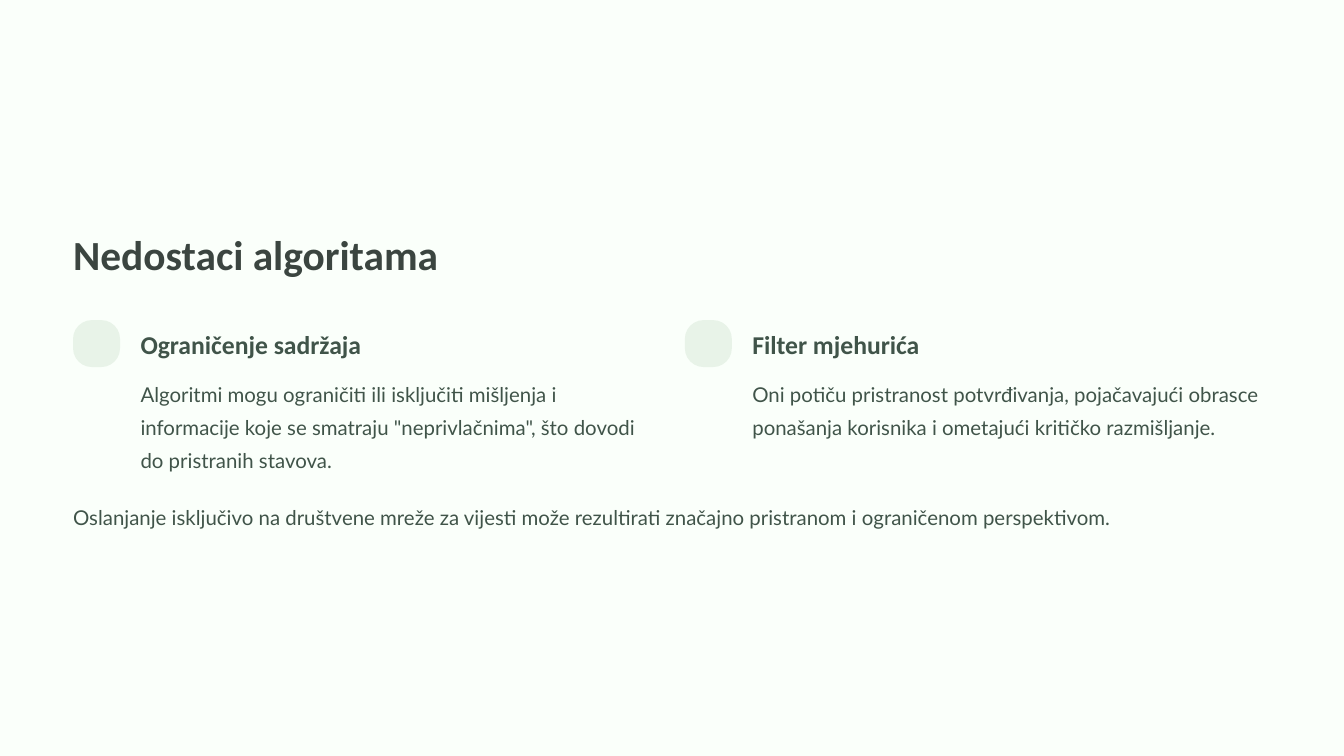
from pptx import Presentation
from pptx.dml.color import RGBColor
from pptx.enum.shapes import MSO_SHAPE
from pptx.enum.text import MSO_ANCHOR, MSO_AUTO_SIZE, PP_ALIGN
from pptx.util import Cm, Pt

COLORS = {"page": "FAFFFA", "title": "3B4540", "text": "405449", "badge": "E8F3E8"}
STYLES = {
    "title": ("Calibri", 35.5, 44.5, True, "title"),
    "head": ("Calibri", 22, 27.5, True, "text"),
    "body": ("Lato", 17.5, 28.5, False, "text"),
}
LEFT = 2.21
STEP = 18.5
INDENT = 2.04
POINTS = [
    (
        "Ograničenje sadržaja",
        "Algoritmi mogu ograničiti ili isključiti mišljenja i informacije koje se "
        "smatraju \"neprivlačnima\", što dovodi do pristranih stavova.",
    ),
    (
        "Filter mjehurića",
        "Oni potiču pristranost potvrđivanja, pojačavajući obrasce ponašanja "
        "korisnika i ometajući kritičko razmišljanje.",
    ),
]
CLOSING = (
    "Oslanjanje isključivo na društvene mreže za vijesti može rezultirati "
    "značajno pristranom i ograničenom perspektivom."
)


def paint(fill, name):
    fill.solid()
    fill.fore_color.rgb = RGBColor.from_string(COLORS[name])


def write(shape, text, style):
    face, size, line, bold, color = STYLES[style]
    frame = shape.text_frame
    frame.word_wrap = True
    frame.auto_size = MSO_AUTO_SIZE.NONE
    frame.vertical_anchor = MSO_ANCHOR.TOP
    frame.margin_left = frame.margin_right = Cm(0)
    frame.margin_top = frame.margin_bottom = Cm(0)
    para = frame.paragraphs[0]
    para.alignment = PP_ALIGN.LEFT
    para.line_spacing = Pt(line)
    run = para.add_run()
    run.text = text
    font = run.font
    font.name = face
    font.size = Pt(size)
    font.bold = bold
    font.color.rgb = RGBColor.from_string(COLORS[color])


def add_title(slide, text):
    title = slide.shapes.title
    title.left, title.top = Cm(LEFT), Cm(6.86)
    title.width, title.height = Cm(18.24), Cm(1.57)
    write(title, text, "title")


def add_text(slide, text, style, left, top, width, height):
    box = slide.shapes.add_textbox(Cm(left), Cm(top), Cm(width), Cm(height))
    write(box, text, style)


def add_badge(slide, left):
    badge = slide.shapes.add_shape(
        MSO_SHAPE.ROUNDED_RECTANGLE, Cm(left), Cm(9.68), Cm(1.42), Cm(1.42)
    )
    badge.adjustments[0] = 0.4
    badge.shadow.inherit = False
    paint(badge.fill, "badge")
    badge.line.fill.background()


def add_point(slide, left, head, body):
    add_badge(slide, left)
    add_text(slide, head, "head", left + INDENT, 9.91, 15.67, 0.99)
    add_text(slide, body, "body", left + INDENT, 11.28, 15.67, 3.02)


def main():
    deck = Presentation()
    deck.slide_width, deck.slide_height = Cm(40.64), Cm(22.86)
    slide = deck.slides.add_slide(deck.slide_layouts[5])
    paint(slide.background.fill, "page")
    add_title(slide, "Nedostaci algoritama")
    for index, (head, body) in enumerate(POINTS):
        add_point(slide, LEFT + index * STEP, head, body)
    add_text(slide, CLOSING, "body", LEFT, 15.01, 36.22, 1.02)
    deck.save("out.pptx")


if __name__ == "__main__":
    main()
